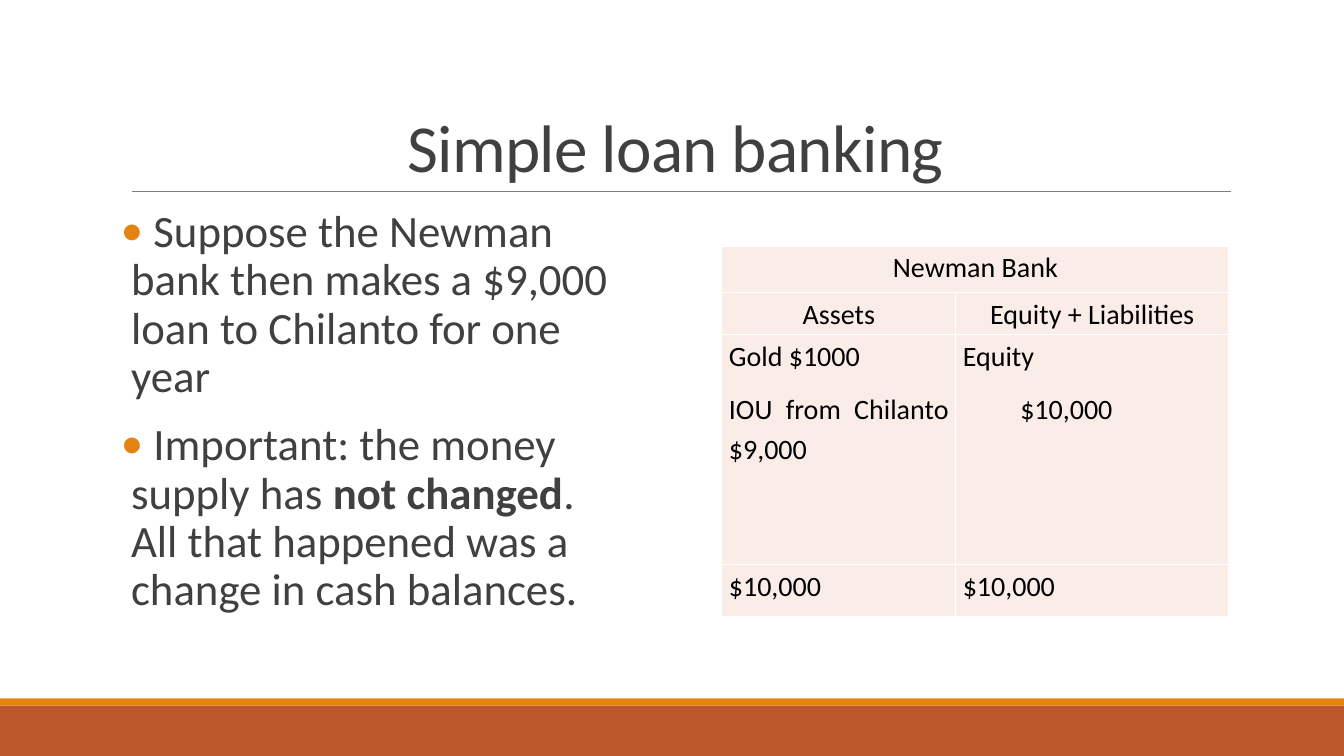
from lxml import etree
from pptx import Presentation
from pptx.dml.color import RGBColor
from pptx.enum import shapes, text
from pptx.oxml import ns
from pptx.util import Inches, Pt

RUST = RGBColor(0xBD, 0x58, 0x2C)
ORANGE = RGBColor(0xE4, 0x83, 0x12)
GRAY = RGBColor(0x80, 0x80, 0x80)
DARK = RGBColor(0x40, 0x40, 0x40)
BLACK = RGBColor(0, 0, 0)
WHITE = RGBColor(0xFF, 0xFF, 0xFF)
BLUSH = RGBColor(0xFA, 0xED, 0xE7)


def format_run(run, size, color, bold=False):
    run.font.name = "Calibri"
    run.font.size = Pt(size)
    run.font.color.rgb = color
    run.font.bold = bold


def add_solid(parent, color):
    fill = etree.SubElement(parent, ns.qn("a:solidFill"))
    etree.SubElement(fill, ns.qn("a:srgbClr"), val=str(color))


prs = Presentation()
prs.slide_width = Inches(13.33)
prs.slide_height = Inches(7.5)
slide = prs.slides.add_slide(prs.slide_layouts[1])

for top, height, color in [(7, 0.5, RUST), (6.93, 0.07, ORANGE)]:
    band = slide.shapes.add_shape(
        shapes.MSO_SHAPE.RECTANGLE, 0, Inches(top), prs.slide_width, Inches(height))
    band.shadow.inherit = False
    band.fill.solid()
    band.fill.fore_color.rgb = color
    band.line.fill.background()

rule = slide.shapes.add_connector(
    shapes.MSO_CONNECTOR.STRAIGHT, Inches(1.31), Inches(1.9), Inches(12.21), Inches(1.9))
rule.line.color.rgb = GRAY
rule.line.width = Pt(0.5)
etree.SubElement(rule._element.spPr, ns.qn("a:effectLst"))

heading = slide.shapes.title
heading.left, heading.top = Inches(1.2), Inches(0.31)
heading.width, heading.height = Inches(11), Inches(1.59)
heading.text_frame.text = "Simple loan banking"
heading.text_frame.auto_size = text.MSO_AUTO_SIZE.NONE
heading.text_frame.vertical_anchor = text.MSO_ANCHOR.BOTTOM
heading_line = heading.text_frame.paragraphs[0]
heading_line.alignment = text.PP_ALIGN.CENTER
heading_line.line_spacing = 0.85
format_run(heading_line.runs[0], 48, DARK)
heading_line.runs[0].font._element.set("spc", "-50")

points = [
    [" Suppose the Newman bank then makes a $9,000 loan to Chilanto for one year"],
    [" Important: the money supply has ", "not changed",
     ". All that happened was a change in cash balances."],
]
story = slide.placeholders[1]
story.left, story.top = Inches(1.2), Inches(2.02)
story.width, story.height = Inches(4.86), Inches(4.4)
story_frame = story.text_frame
story_frame.auto_size = text.MSO_AUTO_SIZE.NONE
story_frame.vertical_anchor = text.MSO_ANCHOR.TOP
story_frame.margin_left = story_frame.margin_right = 0
story_frame.text = "\n".join("" for _ in points)
for paragraph, pieces in zip(story_frame.paragraphs, points):
    paragraph.line_spacing = 0.9
    paragraph.space_before = Pt(12)
    paragraph.space_after = Pt(2)
    for piece in pieces:
        run = paragraph.add_run()
        run.text = piece
        format_run(run, 32, DARK, piece == "not changed")
    props = paragraph._p.get_or_add_pPr()
    props.set("marL", str(Inches(0.1)))
    props.set("indent", str(-Inches(0.1)))
    bullet_color = etree.SubElement(props, ns.qn("a:buClr"))
    etree.SubElement(bullet_color, ns.qn("a:srgbClr"), val=str(ORANGE))
    etree.SubElement(props, ns.qn("a:buFont"), typeface="Calibri")
    etree.SubElement(props, ns.qn("a:buChar"), char="•")

entries = [
    ["Newman Bank", ""],
    ["Assets", "Equity + Liabilities"],
    ["Gold $1000\nIOU from Chilanto $9,000", "Equity\n$10,000"],
    ["$10,000", "$10,000"],
]
balance = slide.shapes.add_table(
    4, 2, Inches(7.16), Inches(2.44), Inches(5.03), Inches(3.68)).table
for column, width in zip(balance.columns, [2.32, 2.71]):
    column.width = Inches(width)
for row, height in zip(balance.rows, [0.46, 0.42, 2.28, 0.52]):
    row.height = Inches(height)
balance.cell(0, 0).merge(balance.cell(0, 1))

for r, row in enumerate(entries):
    for c, entry in enumerate(row):
        cell = balance.cell(r, c)
        cell.margin_left = cell.margin_right = Inches(0.07)
        cell.margin_top = cell.margin_bottom = 0
        for side in ["lnL", "lnR", "lnT", "lnB"]:
            border = etree.SubElement(
                cell._tc.get_or_add_tcPr(), ns.qn("a:" + side), w=str(Pt(1)))
            add_solid(border, WHITE)
        cell.fill.solid()
        cell.fill.fore_color.rgb = BLUSH
        if not entry:
            continue
        cell.text_frame.text = entry
        for paragraph in cell.text_frame.paragraphs:
            paragraph.alignment = text.PP_ALIGN.CENTER if r < 2 else text.PP_ALIGN.JUSTIFY
            paragraph.line_spacing = 1.15
            paragraph.space_after = Pt(0 if r == 1 else 10)
            format_run(paragraph.runs[0], 20, BLACK)

equity_amount = balance.cell(2, 1).text_frame.paragraphs[1]
equity_amount._p.get_or_add_pPr().set("marL", str(Inches(0.57)))

prs.save("out.pptx")
